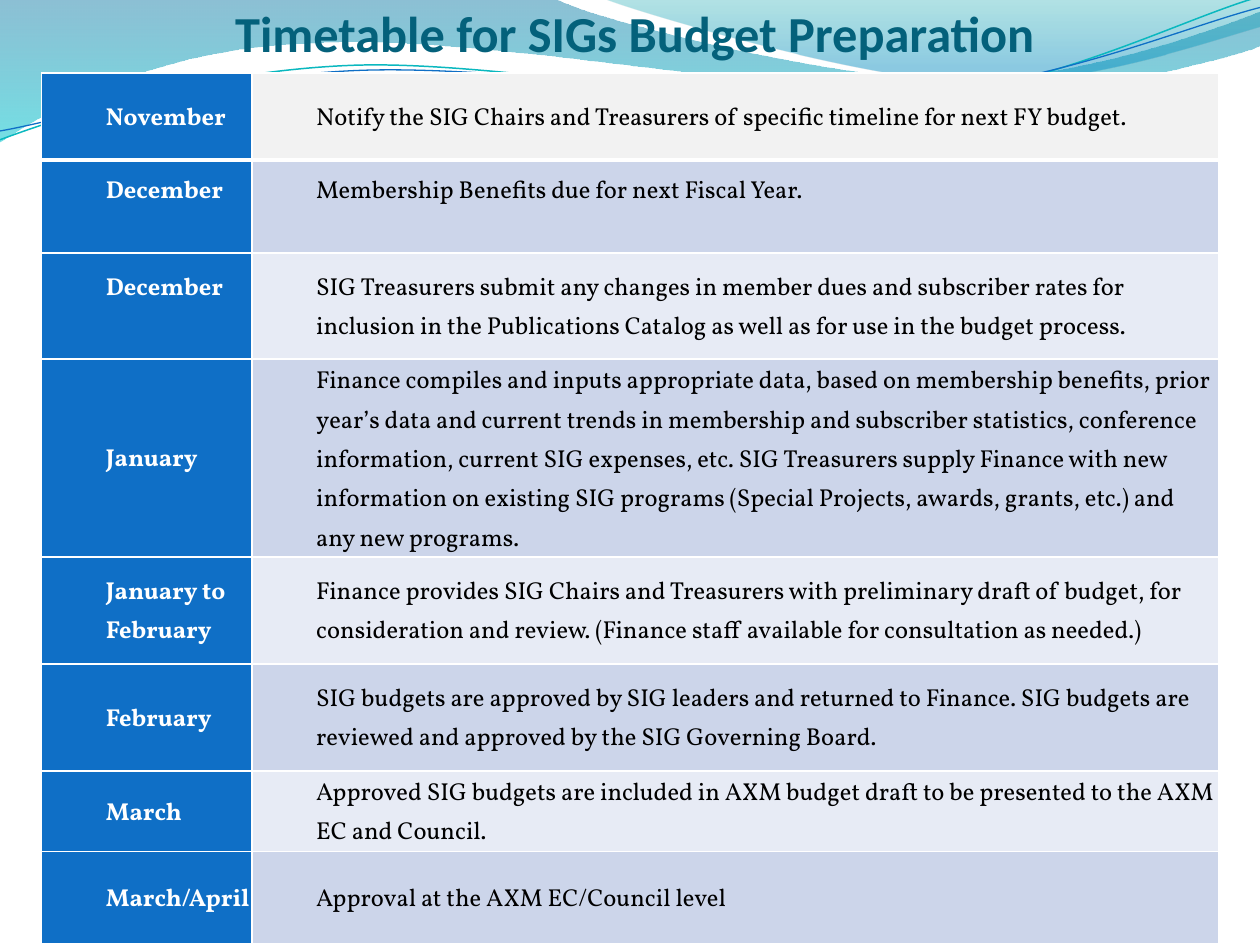
from math import cos, radians, sin

from lxml import etree
from pptx import Presentation
from pptx.dml.color import RGBColor as RGB
from pptx.enum.text import MSO_ANCHOR as Anchor, PP_ALIGN as Align
from pptx.oxml.ns import qn
from pptx.util import Inches, Pt

WHITE = RGB(0xFF, 0xFF, 0xFF)
BLACK = RGB(0, 0, 0)
BLUE = RGB(0x0F, 0x6F, 0xC6)
AQUA = RGB(0x0A, 0xB8, 0xBF)
NAVY = RGB(0x04, 0x61, 0x7B)
GRAY = RGB(0xF2, 0xF2, 0xF2)
BANDS = [RGB(0xE7, 0xEB, 0xF5), RGB(0xCC, 0xD5, 0xEA)]
TILT = 2.7

WIDE = [
    (0, 0), (4.4, -0.01), (4.76, 0.17, 6.64, 0.63, 7.58, 0.63),
    (8.53, 0.63, 9.58, 0.26, 10, 0.09), (10.01, 0.36),
    (9.83, 0.44, 8.7, 0.76, 7.46, 0.75), (6.22, 0.75, 3.82, 0.28, 2.57, 0.34),
    (1.29, 0.36, 0.46, 0.83, -0.01, 1.13), (0, 0),
]
RIGHT = [
    (4.79, -0.01), (5.09, 0.11, 6.82, 0.62, 7.69, 0.65),
    (8.56, 0.69, 9.61, 0.32, 10, 0.21), (10, 0), (4.79, -0.01),
]
UPPER = [
    (0, 1.11), (0.48, 0.93, 1.58, 0.57, 2.77, 0.52),
    (3.95, 0.47, 5.93, 0.89, 7.13, 0.8), (8.33, 0.71, 9.38, 0.15, 9.98, -0.02),
]
LOWER = [
    (0, 1.04), (0.47, 0.96, 1.64, 0.61, 2.83, 0.56),
    (4.03, 0.51, 5.97, 0.84, 7.17, 0.75), (8.36, 0.67, 9.41, 0.21, 10, 0.06),
]
WIDE_STOPS = [(0, RGB(0, 0x74, 0xA1), 45), (1, RGB(0, 0xC6, 0xCF), 55)]
RIGHT_STOPS = [(0, RGB(0, 0xA1, 0xA9), 30), (0.8, RGB(0, 0x8B, 0xBF), 45)]

ROWS = [
    (0.69, "November", "Notify the SIG Chairs and Treasurers of specific timeline for next FY budget."),
    (0.74, "December", "Membership Benefits due for next Fiscal Year."),
    (0.84, "December", "SIG Treasurers submit any changes in member dues and subscriber rates for "
     "inclusion in the Publications Catalog as well as for use in the budget process."),
    (1.57, "January", "Finance compiles and inputs appropriate data, based on membership benefits, "
     "prior year’s data and current trends in membership and subscriber statistics, conference "
     "information, current SIG expenses, etc. SIG Treasurers supply Finance with new information "
     "on existing SIG programs (Special Projects, awards, grants, etc.) and any new programs."),
    (0.85, "January to February", "Finance provides SIG Chairs and Treasurers with preliminary draft "
     "of budget, for consideration and review. (Finance staff available for consultation as needed.)"),
    (0.85, "February", "SIG budgets are approved by SIG leaders and returned to Finance. "
     "SIG budgets are reviewed and approved by the SIG Governing Board."),
    (0.64, "March", "Approved SIG budgets are included in AXM budget draft to be presented to "
     "the AXM EC and Council."),
    (0.73, "March/April", "Approval at the AXM EC/Council level"),
]
TOP_GAPS = {(1, 0): 0.08, (1, 1): 0.08, (2, 0): 0.11}


def turn(x, y, angle):
    a = radians(angle)
    x, y = x - 5, y - 0.57
    return Inches(5 + x * cos(a) - y * sin(a)), Inches(0.57 + x * sin(a) + y * cos(a))


def add_path(slide, parts, close, angle=0):
    knots = [[turn(*part[i:i + 2], angle) for i in range(0, len(part), 2)] for part in parts]
    ends = [points[-1] for points in knots]
    pen = slide.shapes.build_freeform(*ends[0], scale=1.0)
    pen.add_line_segments(ends[1:], close=close)
    shape = pen.convert_to_shape()
    lines = list(shape.element.spPr.iter(qn("a:lnTo")))
    for line, points in zip(lines, knots[1:]):
        if len(points) == 3:
            curve = etree.Element(qn("a:cubicBezTo"))
            for x, y in points:
                etree.SubElement(curve, qn("a:pt"), x=str(x - shape.left), y=str(y - shape.top))
            line.getparent().replace(line, curve)
    shape.rotation = -angle
    shape.shadow.inherit = False
    return shape


def add_wave(slide, parts, stops):
    shape = add_path(slide, parts, True)
    shape.line.fill.background()
    shape.fill.gradient()
    shape.fill.gradient_angle = 270
    for stop, (place, color, _) in zip(shape.fill.gradient_stops, stops):
        stop.position = place
        stop.color.rgb = color
    marks = shape.element.spPr.iter(qn("a:srgbClr"))
    for mark, (_, _, alpha) in zip(marks, stops):
        etree.SubElement(mark, qn("a:alpha")).set("val", str(alpha * 1000))


def add_curve(slide, parts, color, width):
    shape = add_path(slide, parts, False, TILT)
    shape.fill.background()
    shape.line.color.rgb = color
    shape.line.width = Pt(width)


def style(para, font, size, color, bold):
    for run in para.runs:
        run.font.name = font
        run.font.size = Pt(size)
        run.font.color.rgb = color
        run.font.bold = bold


def add_title(slide, text):
    box = slide.shapes.add_textbox(Inches(0.5), 0, Inches(9.08), Inches(0.5))
    frame = box.text_frame
    frame.word_wrap = True
    frame.vertical_anchor = Anchor.BOTTOM
    frame.margin_left = frame.margin_right = frame.margin_bottom = 0
    frame.text = text
    para = frame.paragraphs[0]
    para.alignment = Align.CENTER
    style(para, "Calibri", 28.8, NAVY, True)


def set_edges(cell, widths):
    props = cell._tc.get_or_add_tcPr()
    for i, (side, width) in enumerate(widths.items()):
        line = etree.Element(qn("a:ln" + side), w=str(Pt(width)))
        fill = etree.SubElement(line, qn("a:solidFill"))
        etree.SubElement(fill, qn("a:srgbClr"), val=str(WHITE))
        props.insert(i, line)


def fill_cell(cell, text, back, color, bold, gap):
    cell.fill.solid()
    cell.fill.fore_color.rgb = back
    cell.margin_left = cell.margin_right = cell.margin_bottom = Inches(0.01)
    cell.margin_top = Inches(gap or 0.01)
    cell.vertical_anchor = Anchor.TOP if gap else Anchor.MIDDLE
    cell.text_frame.text = text
    para = cell.text_frame.paragraphs[0]
    para.line_spacing = 1.15
    props = para._p.get_or_add_pPr()
    props.set("marL", str(Inches(0.5)))
    props.set("indent", "0")
    style(para, "Vollkorn", 14, color, bold)


def add_grid(slide):
    total = sum(row[0] for row in ROWS)
    frame = slide.shapes.add_table(len(ROWS), 2, Inches(0.33), Inches(0.58), Inches(9.34), Inches(total))
    table = frame.table
    for col, width in zip(table.columns, (1.67, 7.67)):
        col.width = Inches(width)
    for r, (height, month, task) in enumerate(ROWS):
        table.rows[r].height = Inches(height)
        band = BANDS[r % 2] if r else GRAY
        looks = [(month, BLUE, WHITE, True), (task, band, BLACK, False)]
        for c, look in enumerate(looks):
            cell = table.cell(r, c)
            fill_cell(cell, *look, TOP_GAPS.get((r, c)))
            set_edges(cell, {"L": 1, "R": 1, "T": 3 if r == 1 else 1, "B": 1 if r else 3})


def main():
    deck = Presentation()
    deck.slide_width, deck.slide_height = Inches(10), Inches(7.5)
    slide = deck.slides.add_slide(deck.slide_layouts[6])
    add_wave(slide, WIDE, WIDE_STOPS)
    add_wave(slide, RIGHT, RIGHT_STOPS)
    add_curve(slide, UPPER, AQUA, 0.85)
    add_curve(slide, LOWER, BLUE, 0.75)
    add_title(slide, "Timetable for SIGs Budget Preparation")
    add_grid(slide)
    deck.save("out.pptx")


if __name__ == "__main__":
    main()
